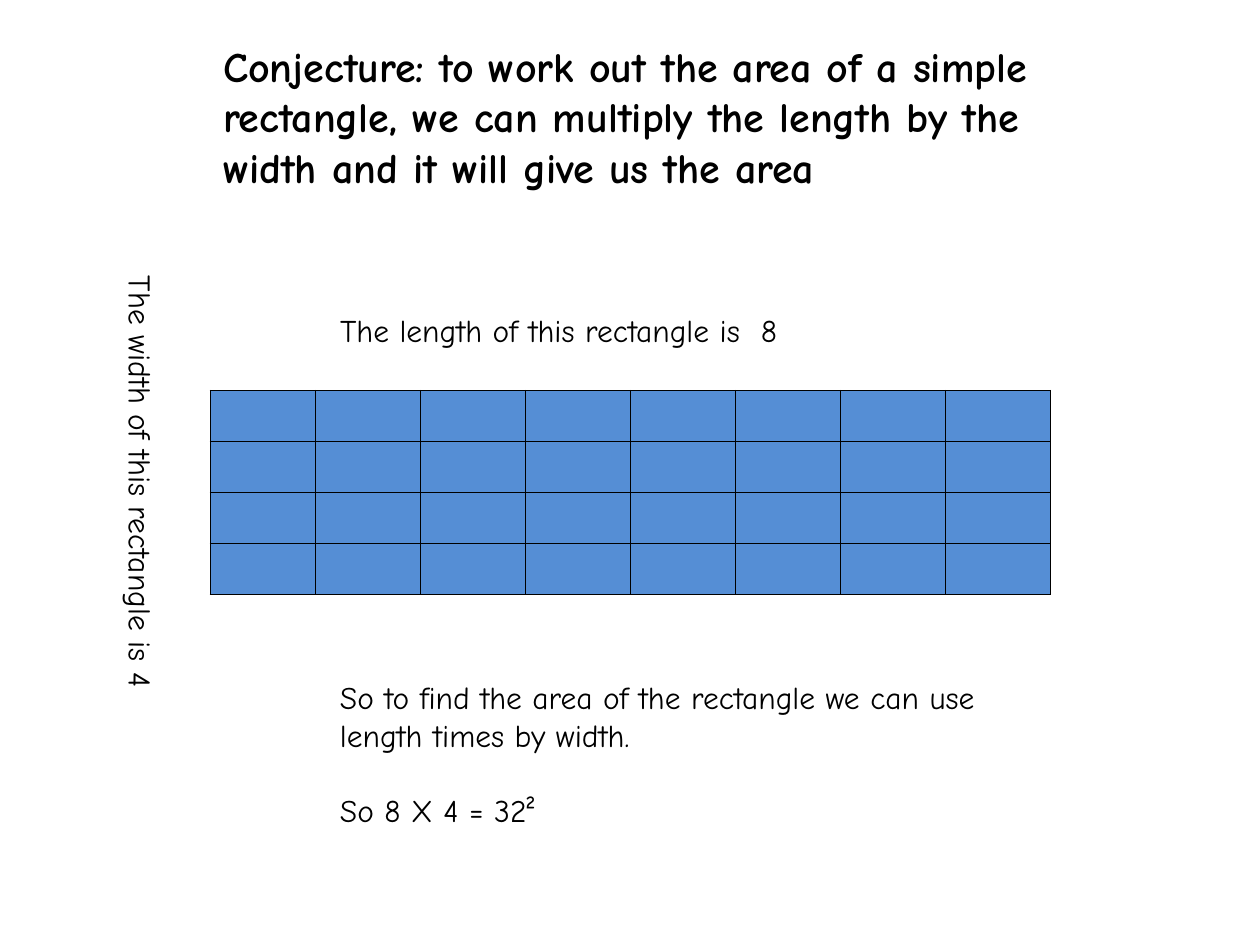
from dataclasses import dataclass

from pptx import Presentation
from pptx.dml.color import RGBColor
from pptx.enum.text import MSO_ANCHOR as Anchor, MSO_AUTO_SIZE as Fit, PP_ALIGN as Align
from pptx.oxml import parse_xml
from pptx.oxml.ns import nsdecls
from pptx.util import Inches, Pt

BLACK = RGBColor(0x00, 0x00, 0x00)
BLUE = RGBColor(0x55, 0x8E, 0xD5)
FONT = "Comic Neue"
ROWS, COLS = 4, 8


@dataclass
class Note:
    left: float
    top: float
    width: float
    height: float
    lines: tuple[str, ...]
    turn: int = 0


NOTES = (
    Note(2.6, 2.42, 4.88, 0.4, ("The length of this rectangle is  8",)),
    Note(-1.32, 4.33, 4.88, 0.4, ("The width of this rectangle is 4",), 90),
    Note(2.6, 5.33, 5.64, 1.31, (
        "So to find the area of the rectangle we can use length times by width.",
        "So 8 X 4 = 32²",
    )),
)


def style(frame, size: int, bold: bool = False) -> None:
    frame.word_wrap = True
    frame.auto_size = Fit.NONE
    frame.vertical_anchor = Anchor.TOP
    for para in frame.paragraphs:
        para.alignment = Align.LEFT
        for run in para.runs:
            font = run.font
            font.name, font.size, font.bold = FONT, Pt(size), bold
            font.color.rgb = BLACK


def add_title(slide, text: str) -> None:
    title = slide.shapes.title
    title.left, title.top = Inches(1.67), Inches(0.27)
    title.width, title.height = Inches(6.63), Inches(1.72)
    title.text_frame.text = text
    style(title.text_frame, 24, bold=True)


def add_note(slide, note: Note) -> None:
    box = slide.shapes.add_textbox(
        Inches(note.left), Inches(note.top), Inches(note.width), Inches(note.height))
    box.rotation = note.turn
    frame = box.text_frame
    frame.text = "\n".join(note.lines)
    style(frame, 18)
    # One line of space between paragraphs
    for para in frame.paragraphs[1:]:
        para.space_before = Pt(21.6)


def add_border(cell) -> None:
    props = cell._tc.get_or_add_tcPr()
    for spot, side in enumerate(("lnL", "lnR", "lnT", "lnB")):
        props.insert(spot, parse_xml(
            f'<a:{side} {nsdecls("a")} w="{Pt(1)}"><a:solidFill>'
            f'<a:srgbClr val="{BLACK}"/></a:solidFill></a:{side}>'))


def add_grid(slide) -> None:
    width, height = Inches(6.67), Inches(1.62)
    table = slide.shapes.add_table(
        ROWS, COLS, Inches(1.67), Inches(3.1), width, height).table
    table.first_row = table.horz_banding = False
    for col in table.columns:
        col.width = width // COLS
    for row in table.rows:
        row.height = height // ROWS
    for cell in table.iter_cells():
        cell.margin_top = cell.margin_bottom = 0
        cell.fill.solid()
        cell.fill.fore_color.rgb = BLUE
        add_border(cell)


def main() -> None:
    deck = Presentation()
    deck.slide_width, deck.slide_height = Inches(10), Inches(7.5)
    slide = deck.slides.add_slide(deck.slide_layouts[5])

    # Conjecture
    add_title(slide, "Conjecture: to work out the area of a simple rectangle, "
                     "we can multiply the length by the width and it will give us the area")
    # Rectangle of unit cells
    add_grid(slide)
    # Side labels and working
    for note in NOTES:
        add_note(slide, note)

    deck.save("out.pptx")


if __name__ == "__main__":
    main()
